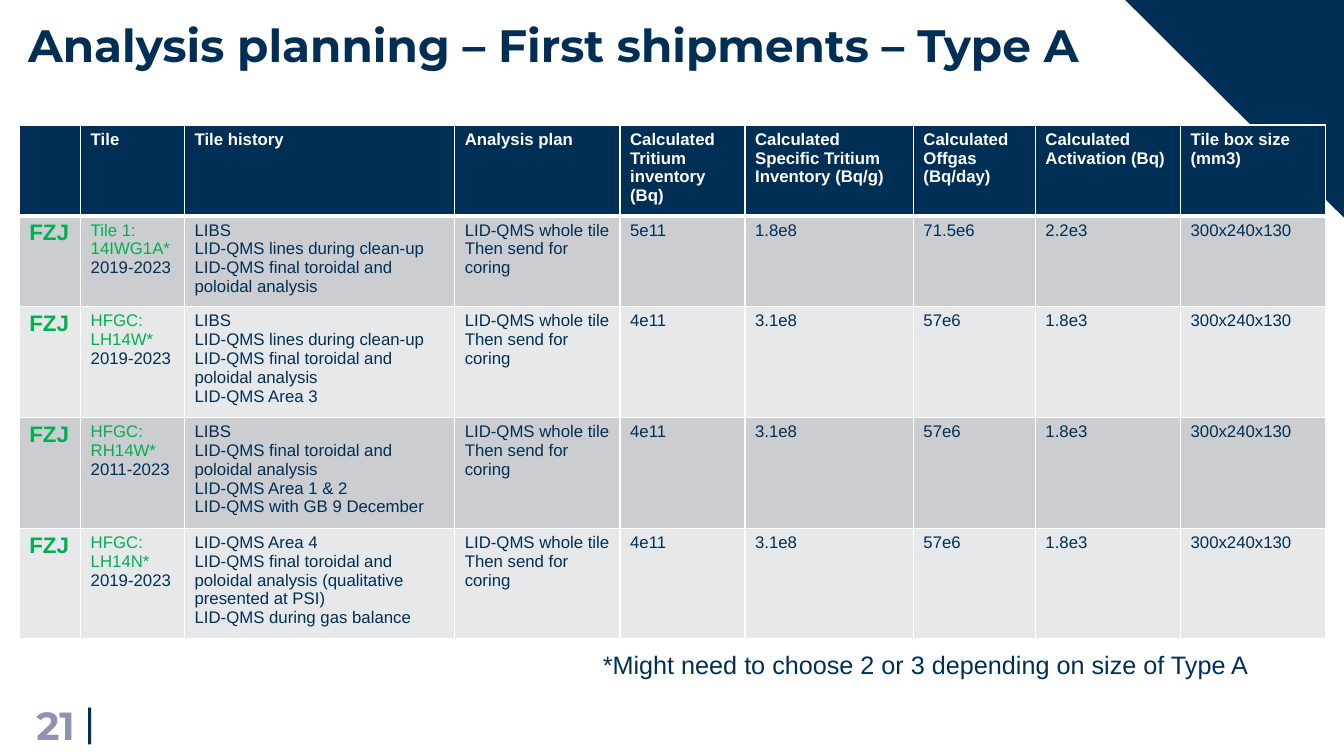
from lxml.etree import SubElement
from pptx import Presentation
from pptx.dml.color import RGBColor
from pptx.enum.text import MSO_ANCHOR, PP_ALIGN
from pptx.oxml.ns import qn
from pptx.util import Inches, Pt

NAVY = RGBColor(0x00, 0x2F, 0x56)
GREEN = RGBColor(0x00, 0xB0, 0x50)
LILAC = RGBColor(0x90, 0x91, 0xB3)
WHITE = RGBColor(0xFF, 0xFF, 0xFF)
DARK_BAND = RGBColor(0xCC, 0xCD, 0xD1)
LIGHT_BAND = RGBColor(0xE7, 0xE8, 0xE9)

COLUMN_WIDTHS = [0.61, 1.03, 2.68, 1.64, 1.24, 1.67, 1.21, 1.44, 1.44]
ROW_HEIGHTS = [0.9, 0.9, 1.1, 1.1, 1.1]
PLAN = "LID-QMS whole tile\nThen send for coring"
TOROIDAL = "LID-QMS final toroidal and poloidal analysis"
CLEAN_UP = "LIBS\nLID-QMS lines during clean-up\n" + TOROIDAL
BOX_SIZE = "300x240x130"
ROWS = [
    ["", "Tile", "Tile history", "Analysis plan", "Calculated Tritium inventory (Bq)",
     "Calculated Specific Tritium Inventory (Bq/g)", "Calculated Offgas (Bq/day)",
     "Calculated Activation (Bq)", "Tile box size\n(mm3)"],
    ["FZJ", "Tile 1: 14IWG1A* 2019-2023", CLEAN_UP,
     PLAN, "5e11", "1.8e8", "71.5e6", "2.2e3", BOX_SIZE],
    ["FZJ", "HFGC: LH14W* 2019-2023", CLEAN_UP + "\nLID-QMS Area 3",
     PLAN, "4e11", "3.1e8", "57e6", "1.8e3", BOX_SIZE],
    ["FZJ", "HFGC:\nRH14W*\n2011-2023",
     "LIBS\n" + TOROIDAL + "\nLID-QMS Area 1 & 2\nLID-QMS with GB 9 December",
     PLAN, "4e11", "3.1e8", "57e6", "1.8e3", BOX_SIZE],
    ["FZJ", "HFGC: LH14N* 2019-2023",
     "LID-QMS Area 4\n" + TOROIDAL + " (qualitative presented at PSI)\nLID-QMS during gas balance",
     PLAN, "4e11", "3.1e8", "57e6", "1.8e3", BOX_SIZE],
]


def add_text(paragraph, text, size, color, bold=False, name="Arial"):
    run = paragraph.add_run()
    run.text = text
    for attribute, value in {"size": Pt(size), "bold": bold, "name": name}.items():
        setattr(run.font, attribute, value)
    run.font.color.rgb = color


def set_borders(cell, widths):
    properties = cell._tc.get_or_add_tcPr()
    for side, width in widths.items():
        line = SubElement(properties, qn("a:ln" + side), w=str(Pt(width)))
        fill = SubElement(line, qn("a:solidFill"))
        SubElement(fill, qn("a:srgbClr"), val=str(WHITE))


presentation = Presentation()
presentation.slide_width = Inches(13.33)
presentation.slide_height = Inches(7.5)
slide = presentation.slides.add_slide(presentation.slide_layouts[6])

builder = slide.shapes.build_freeform(Inches(11.16), 0)
builder.add_line_segments([(Inches(13.33), 0), (Inches(13.33), Inches(2.16))])
corner = builder.convert_to_shape()
corner.shadow.inherit = False
corner.fill.solid()
corner.fill.fore_color.rgb = NAVY
corner.line.fill.background()

table = slide.shapes.add_table(
    len(ROWS), len(COLUMN_WIDTHS), Inches(0.19), Inches(1.24), Inches(12.96), Inches(5.1)).table
for column, width in zip(table.columns, COLUMN_WIDTHS):
    column.width = Inches(width)
for row, height in zip(table.rows, ROW_HEIGHTS):
    row.height = Inches(height)

for row_index, texts in enumerate(ROWS):
    header = row_index == 0
    band = NAVY if header else DARK_BAND if row_index % 2 else LIGHT_BAND
    for column_index, text in enumerate(texts):
        cell = table.cell(row_index, column_index)
        set_borders(cell, {"L": 1, "R": 1, "T": 3 if row_index == 1 else 1, "B": 3 if header else 1})
        cell.fill.solid()
        cell.fill.fore_color.rgb = band
        if not text:
            continue
        for line_index, line in enumerate(text.split("\n")):
            frame = cell.text_frame
            paragraph = frame.add_paragraph() if line_index else frame.paragraphs[0]
            if header:
                add_text(paragraph, line, 12, WHITE, True)
            elif column_index == 0:
                add_text(paragraph, line, 16, GREEN, True)
            elif column_index == 1:
                label, century, years = line.partition("20")
                for part, color in ((label, GREEN), (century + years, NAVY)):
                    if part:
                        add_text(paragraph, part, 12, color)
            else:
                add_text(paragraph, line, 12, NAVY)

TOP, MIDDLE = MSO_ANCHOR.TOP, MSO_ANCHOR.MIDDLE
LEFT, RIGHT = PP_ALIGN.LEFT, PP_ALIGN.RIGHT
TEXT_BOXES = [
    ("Analysis planning – First shipments – Type A", (0.18, 0.12, 11.6, 0.6),
     32.4, NAVY, True, "Montserrat", TOP, LEFT, True, 0.1),
    ("21", (0.11, 6.99, 0.73, 0.4), 28, LILAC, True, "Montserrat", MIDDLE, RIGHT, True, 0.1),
    ("|", (0.84, 6.95, 0.05, 0.4), 28, NAVY, False, "Arial", MIDDLE, LEFT, False, 0),
    ("*Might need to choose 2 or 3 depending on size of Type A", (5.88, 6.39, 6.75, 0.4),
     18, NAVY, False, "Arial", TOP, LEFT, False, 0.1),
]
for text, place, size, color, bold, name, anchor, alignment, wrap, margin in TEXT_BOXES:
    frame = slide.shapes.add_textbox(*map(Inches, place)).text_frame
    settings = {"word_wrap": wrap, "vertical_anchor": anchor,
                "margin_left": Inches(margin), "margin_right": Inches(margin)}
    for attribute, value in settings.items():
        setattr(frame, attribute, value)
    frame.paragraphs[0].alignment = alignment
    add_text(frame.paragraphs[0], text, size, color, bold, name)

presentation.save("out.pptx")
